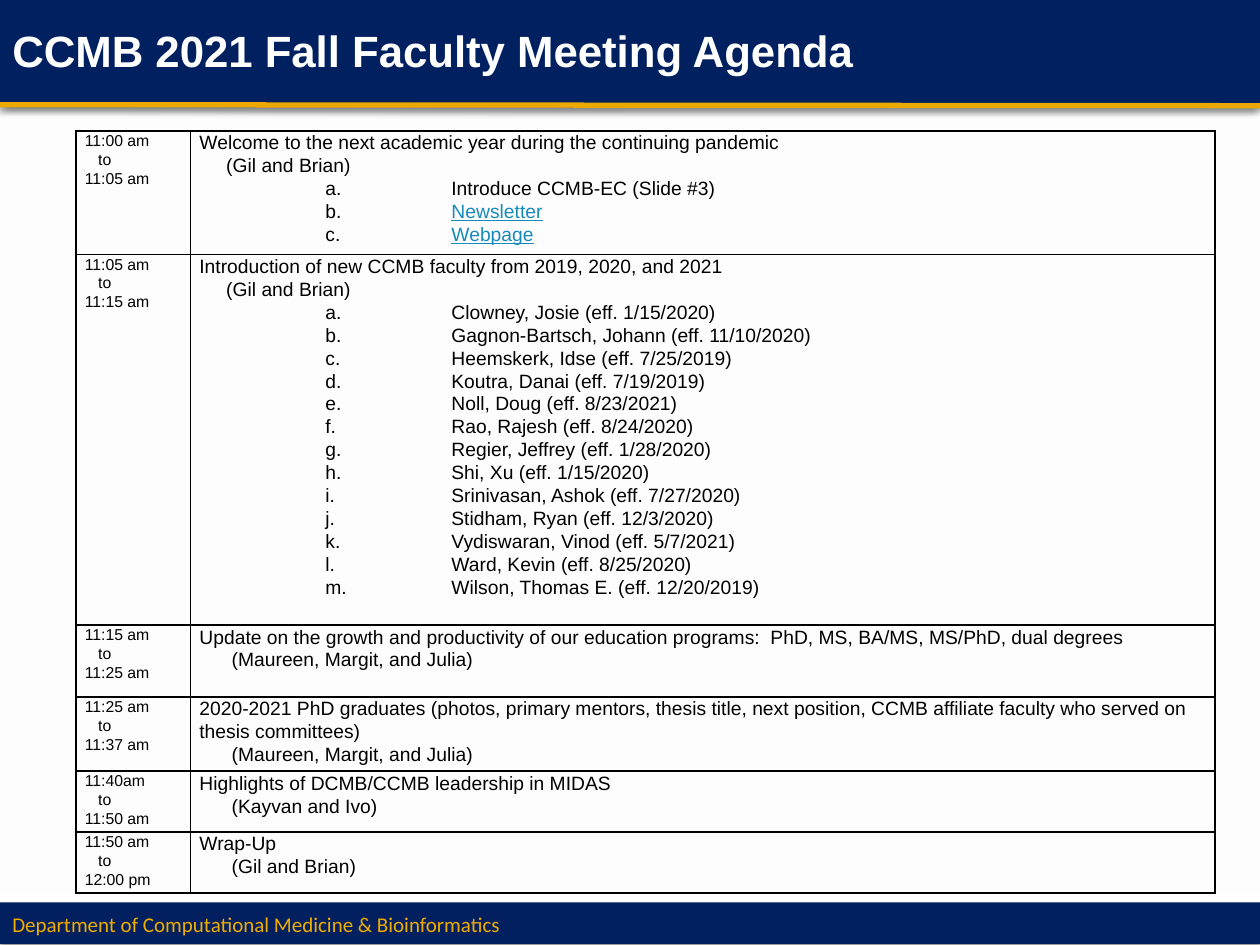
from pptx import Presentation
from pptx.dml.color import RGBColor
from pptx.enum.shapes import MSO_CONNECTOR as Connector, MSO_SHAPE as Shape
from pptx.enum.text import MSO_ANCHOR as Anchor
from pptx.oxml.ns import qn
from pptx.util import Cm, Pt
from lxml.etree import SubElement

NAVY, GOLD, WHITE, BLACK, LINK = "002060", "EBA900", "FFFFFF", "000000", "168BBA"
LINKS = ("Newsletter", "Webpage")

# (start, end, topic, presenters, presenter indent in cm, sub-items)
AGENDA = [
    ("11:00 am", "11:05 am",
     "Welcome to the next academic year during the continuing pandemic",
     "(Gil and Brian)", 0.54, ["Introduce CCMB-EC (Slide #3)", *LINKS]),
    ("11:05 am", "11:15 am",
     "Introduction of new CCMB faculty from 2019, 2020, and 2021",
     "(Gil and Brian)", 0.54,
     ["Clowney, Josie (eff. 1/15/2020)", "Gagnon-Bartsch, Johann (eff. 11/10/2020)",
      "Heemskerk, Idse (eff. 7/25/2019)", "Koutra, Danai (eff. 7/19/2019)",
      "Noll, Doug (eff. 8/23/2021)", "Rao, Rajesh (eff. 8/24/2020)",
      "Regier, Jeffrey (eff. 1/28/2020)", "Shi, Xu (eff. 1/15/2020)",
      "Srinivasan, Ashok (eff. 7/27/2020)", "Stidham, Ryan (eff. 12/3/2020)",
      "Vydiswaran, Vinod (eff. 5/7/2021)", "Ward, Kevin (eff. 8/25/2020)",
      "Wilson, Thomas E. (eff. 12/20/2019)"]),
    ("11:15 am", "11:25 am",
     "Update on the growth and productivity of our education programs:  "
     "PhD, MS, BA/MS, MS/PhD, dual degrees",
     "(Maureen, Margit, and Julia)", 0.65, []),
    ("11:25 am", "11:37 am",
     "2020-2021 PhD graduates (photos, primary mentors, thesis title, next position, "
     "CCMB affiliate faculty who served on thesis committees)",
     "(Maureen, Margit, and Julia)", 0.65, []),
    ("11:40am", "11:50 am", "Highlights of DCMB/CCMB leadership in MIDAS",
     "(Kayvan and Ivo)", 0.65, []),
    ("11:50 am", "12:00 pm", "Wrap-Up", "(Gil and Brian)", 0.65, []),
]
COLUMN_WIDTHS = (2.31, 20.65)
ROW_HEIGHTS = (2.43, 7.34, 1.45, 1.45, 1.19, 1.19)


def rgb(color):
    return RGBColor.from_string(color)


def set_shadow(shape, alpha=40, blur=4, distance=3, angle=45):
    effects = SubElement(shape._element.spPr, qn("a:effectLst"))
    shadow = SubElement(effects, qn("a:outerShdw"), blurRad=str(Pt(blur)),
                        dist=str(Pt(distance)), dir=str(angle * 60000), rotWithShape="0")
    black = SubElement(shadow, qn("a:srgbClr"), val=BLACK)
    SubElement(black, qn("a:alpha"), val=str(alpha * 1000))


def add_band(slide, top, height, color):
    """Add a bar across the full slide width."""
    band = slide.shapes.add_shape(Shape.RECTANGLE, 0, Cm(top), Cm(25.4), Cm(height))
    band.fill.solid()
    band.fill.fore_color.rgb = rgb(color)
    band.line.fill.background()
    return band


def add_rule(slide, start_y, end_y):
    rule = slide.shapes.add_connector(Connector.STRAIGHT, 0, Cm(start_y), Cm(25.4), Cm(end_y))
    rule.line.color.rgb = rgb(GOLD)
    rule.line.width = Pt(3)
    set_shadow(rule, angle=135)


def write(frame, text, size=11, font="Arial", color=BLACK, bold=False, underline=False,
          indent=0, hanging=0, numbered=False, spacing=None):
    """Write one paragraph, filling the empty first one before adding more."""
    paragraph = frame.paragraphs[0]
    if paragraph.runs:
        paragraph = frame.add_paragraph()
    properties = paragraph._p.get_or_add_pPr()
    properties.set("marL", str(Cm(indent)))
    properties.set("indent", str(-Cm(hanging)))
    if numbered:
        bullet_color = SubElement(properties, qn("a:buClr"))
        SubElement(bullet_color, qn("a:srgbClr"), val=BLACK)
        SubElement(properties, qn("a:buFont"), typeface=font)
        SubElement(properties, qn("a:buAutoNum"), type="alphaLcPeriod")
    if spacing:
        paragraph.line_spacing = spacing
    run = paragraph.add_run()
    run.text = text
    run.font.size, run.font.name = Pt(size), font
    run.font.bold, run.font.underline = bold, underline
    run.font.color.rgb = rgb(color)


def add_label(slide, text, left, top, width, height, **style):
    box = slide.shapes.add_textbox(Cm(left), Cm(top), Cm(width), Cm(height))
    box.text_frame.word_wrap = True
    box.text_frame.vertical_anchor = Anchor.MIDDLE
    write(box.text_frame, text, **style)


def format_cell(cell):
    cell.margin_left = cell.margin_right = Cm(0.18)
    cell.margin_top = cell.margin_bottom = 0
    properties = cell._tc.get_or_add_tcPr()
    for side in ("lnL", "lnR", "lnT", "lnB"):
        border = SubElement(properties, qn(f"a:{side}"), w=str(Pt(1)))
        fill = SubElement(border, qn("a:solidFill"))
        SubElement(fill, qn("a:srgbClr"), val=BLACK)
    cell.fill.background()


def fill_time(frame, start, end):
    for text, indent in ((start, 0), ("to", 0.27), (end, 0)):
        write(frame, text, size=9, indent=indent, spacing=1.07)


def fill_topic(frame, topic, presenters, presenter_indent, items):
    write(frame, topic, spacing=1.07)
    write(frame, presenters, indent=presenter_indent, spacing=1.07)
    for item in items:
        is_link = item in LINKS
        write(frame, item, color=LINK if is_link else BLACK, underline=is_link,
              indent=5.08, hanging=2.54, numbered=True, spacing=1.07)


def add_agenda(slide):
    table = slide.shapes.add_table(len(AGENDA), 2, Cm(1.53), Cm(2.64),
                                   Cm(sum(COLUMN_WIDTHS)), Cm(sum(ROW_HEIGHTS))).table
    table.first_row = table.horz_banding = False
    for column, width in zip(table.columns, COLUMN_WIDTHS):
        column.width = Cm(width)
    for row, height, (start, end, *topic) in zip(table.rows, ROW_HEIGHTS, AGENDA):
        row.height = Cm(height)
        for cell in row.cells:
            format_cell(cell)
        fill_time(row.cells[0].text_frame, start, end)
        fill_topic(row.cells[1].text_frame, *topic)


def main():
    deck = Presentation()
    deck.slide_width, deck.slide_height = Cm(25.4), Cm(19.05)
    slide = deck.slides.add_slide(deck.slide_layouts[6])
    slide.background.fill.solid()
    slide.background.fill.fore_color.rgb = rgb("FDFDFD")

    set_shadow(add_band(slide, 0, 2.11, NAVY))
    add_rule(slide, 2.11, 2.13)
    add_band(slide, 17.98, 1.07, WHITE).shadow.inherit = False
    set_shadow(add_band(slide, 18.19, 0.84, "022060"), alpha=38, blur=3.1, distance=2, angle=90)
    add_label(slide, "Department of Computational Medicine & Bioinformatics",
              0, 18.11, 25.4, 1.02, size=12, font="Calibri", color="F0AD00")
    add_label(slide, "CCMB 2021 Fall Faculty Meeting Agenda",
              0, 0.15, 18.21, 1.7, size=25, color=WHITE, bold=True)
    add_agenda(slide)
    deck.save("out.pptx")


if __name__ == "__main__":
    main()
